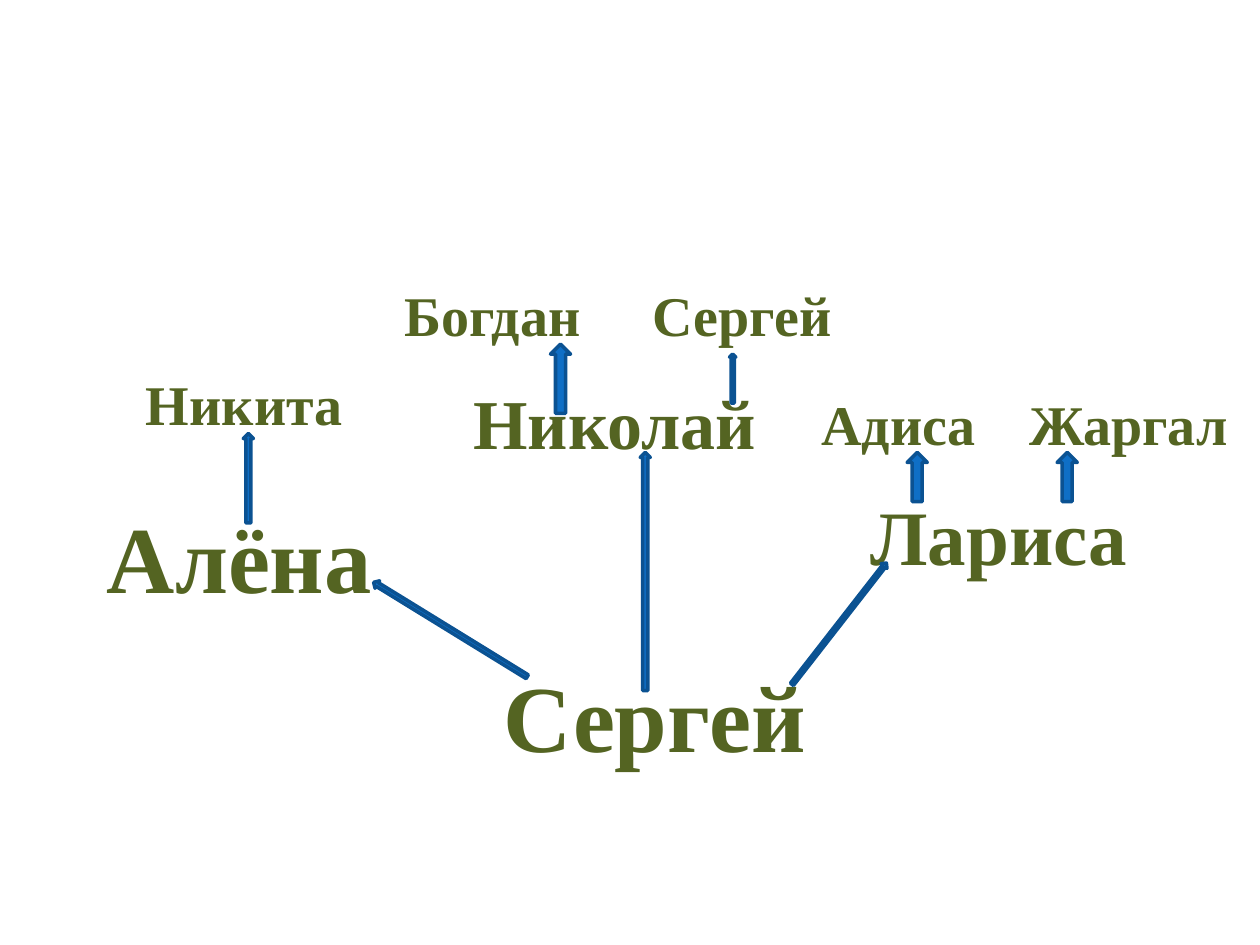
from pptx import Presentation
from pptx.dml.color import RGBColor
from pptx.enum.shapes import MSO_SHAPE
from pptx.enum.text import MSO_AUTO_SIZE
from pptx.util import Pt

COLORS = {"name": "546422", "arrow": "0F6FC6", "outline": "0B5292"}
FONT = "Times New Roman"
BOX_HEIGHTS = {54: 72.7, 44: 60.5, 40: 55.4, 32: 46.1}  # by font size

# name, font size, left, top, width
PEOPLE = [
    ("Сергей", 54, 280.8, 372.2, 188.6),
    ("Алёна", 54, 54, 281.5, 169.9),
    ("Николай", 40, 263.5, 213.1, 209.5),
    ("Лариса", 44, 490.3, 275.8, 187.2),
    ("Никита", 32, 76.3, 207.4, 128.2),
    ("Богдан", 32, 223.9, 157, 130.3),
    ("Сергей", 32, 365.8, 157, 118.1),
    ("Адиса", 32, 462.2, 218.9, 143.3),
    ("Жаргал", 32, 581, 218.9, 157.7),
]

# left, top, width, height, rotation
ARROWS = [
    (254.9, 308.2, 5, 103, 301.6),
    (365.8, 258.5, 5.8, 136.1, 0),
    (477.4, 312.5, 4.3, 87.8, 37.9),
    (139, 247.7, 5.8, 51.1, 0),
    (314.6, 196.6, 11.5, 39.6, 0),
    (416.9, 202.3, 3.6, 28.1, 0),
    (518.4, 258.5, 11.5, 28.1, 0),
    (604.1, 258.5, 11.5, 28.1, 0),
]


def color(key):
    return RGBColor.from_string(COLORS[key])


def add_name(page, name, size, left, top, width):
    box = page.shapes.add_textbox(Pt(left), Pt(top), Pt(width), Pt(BOX_HEIGHTS[size]))
    frame = box.text_frame
    frame.word_wrap = True
    frame.auto_size = MSO_AUTO_SIZE.SHAPE_TO_FIT_TEXT
    para = frame.paragraphs[0]
    para.text = name
    para.font.name = FONT
    para.font.size = Pt(size)
    para.font.bold = True
    para.font.color.rgb = color("name")


def add_arrow(page, left, top, width, height, rotation):
    arrow = page.shapes.add_shape(
        MSO_SHAPE.UP_ARROW, Pt(left), Pt(top), Pt(width), Pt(height))
    arrow.rotation = rotation
    arrow.shadow.inherit = False
    arrow.fill.solid()
    arrow.fill.fore_color.rgb = color("arrow")
    arrow.line.color.rgb = color("outline")
    arrow.line.width = Pt(2)


def main():
    deck = Presentation()
    deck.slide_width, deck.slide_height = Pt(720), Pt(540)
    page = deck.slides.add_slide(deck.slide_layouts[6])
    for person in PEOPLE:
        add_name(page, *person)
    for arrow in ARROWS:
        add_arrow(page, *arrow)
    deck.save("out.pptx")


if __name__ == "__main__":
    main()
